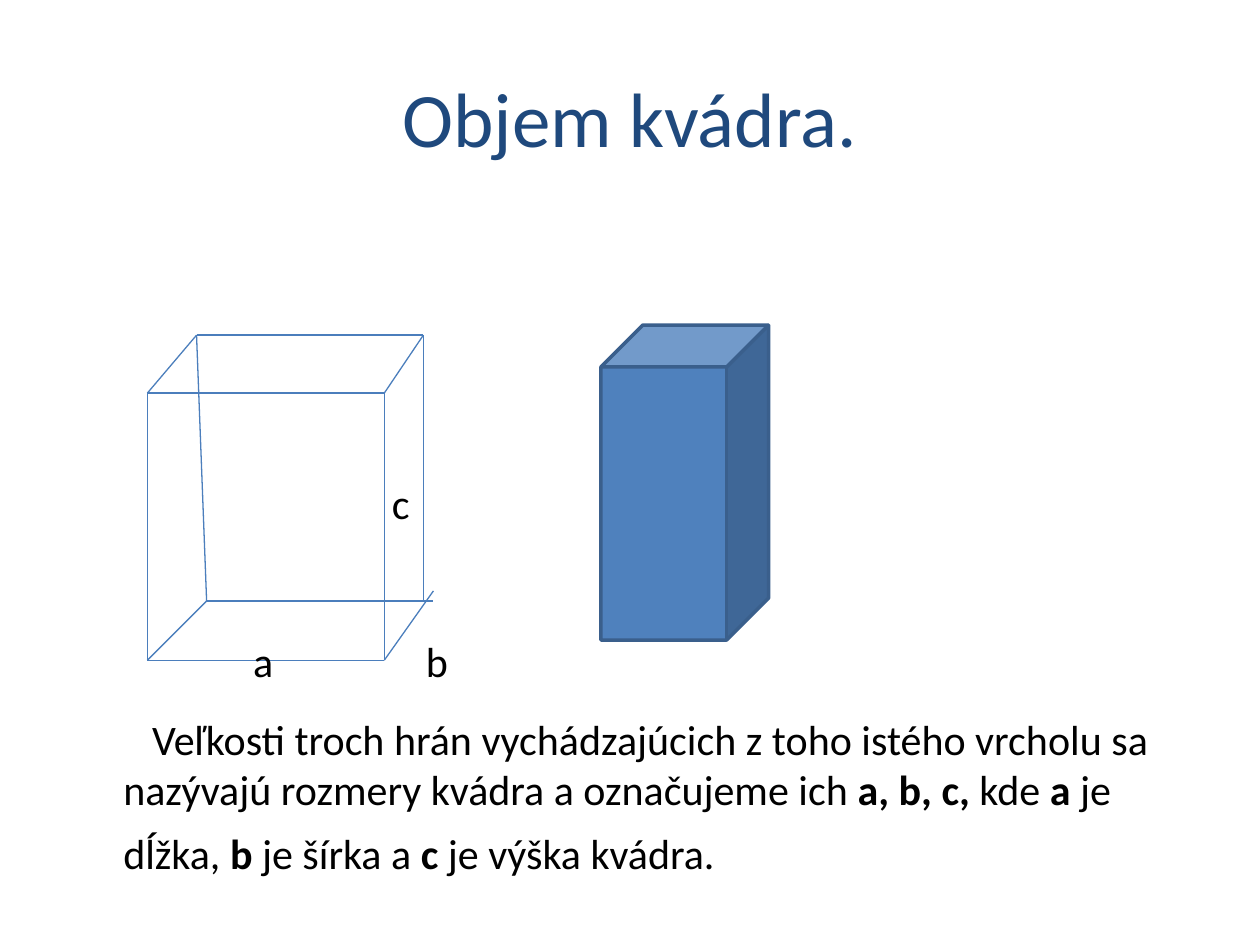
from pptx import Presentation
from pptx.dml.color import RGBColor
from pptx.enum import shapes, text
from pptx.oxml.ns import qn
from pptx.util import Inches, Pt
from lxml import etree

NAVY = RGBColor(0x1F, 0x49, 0x7D)
BLACK = RGBColor(0, 0, 0)
EDGE = RGBColor(0x4B, 0x7E, 0xBC)
FILL = RGBColor(0x4F, 0x81, 0xBD)
RIM = RGBColor(0x3A, 0x5F, 0x8C)


def add_box(slide, left, top, width, height, inset=0):
    box = slide.shapes.add_textbox(Inches(left), Inches(top), Inches(width), Inches(height))
    frame = box.text_frame
    frame.word_wrap = True
    frame.margin_left = frame.margin_right = Inches(inset)
    frame.margin_top = frame.margin_bottom = Inches(inset / 2)
    return frame


def style(run, size, color=BLACK, bold=False):
    run.font.name = "Calibri"
    run.font.size = Pt(size)
    run.font.color.rgb = color
    run.font.bold = bold


def add_title(slide, left, top, width, height):
    frame = add_box(slide, left, top, width, height, 0.1)
    frame.vertical_anchor = text.MSO_ANCHOR.MIDDLE
    frame.text = "Objem kvádra."
    line = frame.paragraphs[0]
    line.alignment = text.PP_ALIGN.CENTER
    style(line.runs[0], 44, NAVY)


def add_frame(slide, left, top, width, height):
    spots = {
        "front low left": (0, height), "front low right": (1.88, height),
        "front top left": (0, 0.46), "front top right": (1.88, 0.46),
        "back top left": (0.39, 0), "back top right": (width, 0),
        "back low left": (0.47, 2.11), "back low right": (width, 2.11),
        "base end": (2.27, 2.11), "side end": (2.27, 2.03),
    }
    edges = [
        ("front low left", "front low right"), ("front low left", "front top left"),
        ("front low right", "front top right"), ("front top left", "front top right"),
        ("front top left", "back top left"), ("front top right", "back top right"),
        ("back top left", "back top right"), ("front low right", "side end"),
        ("back top left", "back low left"), ("back low left", "base end"),
        ("front low left", "back low left"), ("back top right", "back low right"),
    ]
    for start, end in edges:
        (x1, y1), (x2, y2) = spots[start], spots[end]
        line = slide.shapes.add_connector(
            shapes.MSO_CONNECTOR.STRAIGHT,
            Inches(left + x1), Inches(top + y1), Inches(left + x2), Inches(top + y2))
        line.line.color.rgb = EDGE
        line.line.width = Pt(0.75)
        etree.SubElement(line._element.spPr, qn("a:effectLst"))
    for name, x, y in [("a", 0.84, 2.38), ("b", 2.21, 2.38), ("c", 1.94, 1.13)]:
        label = add_box(slide, left + x, top + y, 0.3, 0.41)
        label.text = name
        style(label.paragraphs[0].runs[0], 24)


def add_cube(slide, left, top, width, height):
    cube = slide.shapes.add_shape(
        shapes.MSO_SHAPE.CUBE, Inches(left), Inches(top), Inches(width), Inches(height))
    cube.shadow.inherit = False
    cube.fill.solid()
    cube.fill.fore_color.rgb = FILL
    cube.line.color.rgb = RIM
    cube.line.width = Pt(2)


def add_note(slide, left, top, width, height):
    frame = add_box(slide, left, top, width, height, 0.1)
    line = frame.paragraphs[0]
    line._p.get_or_add_pPr().set("indent", str(Inches(0.23)))
    parts = [
        ("Veľkosti troch hrán vychádzajúcich z toho istého vrcholu sa "
         "nazývajú rozmery kvádra a označujeme ich ", False),
        ("a, b, c,", True), (" kde ", False), ("a", True), (" je dĺžka, ", False),
        ("b", True), (" je šírka a ", False), ("c", True), (" je výška kvádra.", False),
    ]
    for words, bold in parts:
        run = line.add_run()
        run.text = words
        style(run, 24, bold=bold)
    tail = line.add_run()
    tail.text = " "
    style(tail, 32)


def main():
    deck = Presentation()
    deck.slide_width, deck.slide_height = Inches(10), Inches(7.5)
    slide = deck.slides.add_slide(deck.slide_layouts[6])
    add_title(slide, 0.5, 0.3, 9, 1.25)
    add_frame(slide, 1.17, 2.66, 2.19, 2.58)
    add_cube(slide, 4.77, 2.58, 1.33, 2.5)
    add_note(slide, 0.88, 5.61, 8.62, 1.45)
    deck.save("out.pptx")


if __name__ == "__main__":
    main()
